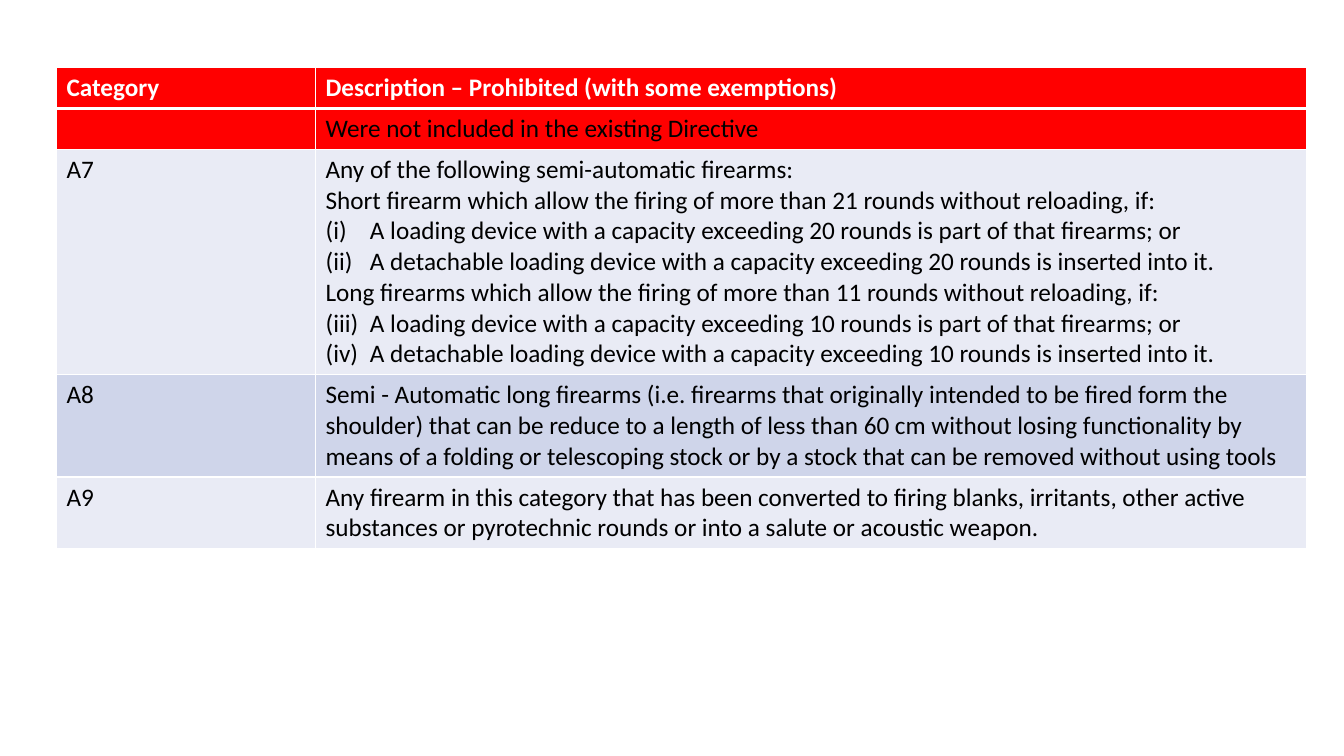
from dataclasses import dataclass
from pptx import Presentation
from pptx.dml.color import RGBColor as Color
from pptx.oxml.ns import qn
from pptx.util import Inches, Pt
from lxml.etree import SubElement as Sub


@dataclass(frozen=True)
class Theme:
    font: str = "Calibri"
    size: int = 18
    white: str = "FFFFFF"
    black: str = "000000"
    red: str = "FF0000"
    pale: str = "E9EBF5"
    blue: str = "CFD5EA"
    thin: int = 1
    thick: int = 3


@dataclass(frozen=True)
class Item:
    text: str
    num: int


class Deck:
    def __init__(self, theme):
        self.theme = theme
        self.prs = Presentation()
        self.prs.slide_width = Inches(13.33)
        self.prs.slide_height = Inches(7.5)
        self.slide = self.prs.slides.add_slide(self.prs.slide_layouts[6])

    def col(self, share):
        return int(self.prs.slide_width * share / 100)

    def row(self, share):
        return int(self.prs.slide_height * share / 100)

    def edge(self, cell, side, width):
        line = Sub(cell._tc.get_or_add_tcPr(), qn(f"a:ln{side}"), w=str(Pt(width)))
        fill = Sub(line, qn("a:solidFill"))
        Sub(fill, qn("a:srgbClr"), val=self.theme.white)

    def number(self, para, start):
        props = para._p.get_or_add_pPr()
        props.set("marL", str(Inches(0.44)))
        props.set("indent", str(-Inches(0.44)))
        Sub(props, qn("a:buFont"), typeface="+mj-lt")
        Sub(props, qn("a:buAutoNum"), type="romanLcParenBoth", startAt=str(start))

    def label(self, cell, lines, head):
        frame = cell.text_frame
        frame.text = "\n".join(x.text if isinstance(x, Item) else x for x in lines)
        for para, line in zip(frame.paragraphs, lines):
            if isinstance(line, Item):
                self.number(para, line.num)
            for run in para.runs:
                font = run.font
                font.name, font.size, font.bold = self.theme.font, Pt(self.theme.size), head
                tone = self.theme.white if head else self.theme.black
                font.color.rgb = Color.from_string(tone)

    def table(self, left, top, cols, rows, data, fills):
        shape = self.slide.shapes.add_table(
            len(rows), len(cols), self.col(left), self.row(top),
            self.col(sum(cols)), self.row(sum(rows)))
        grid = shape.table
        grid.first_row = grid.horz_banding = False
        for part, share in zip(grid.columns, cols):
            part.width = self.col(share)
        for part, share in zip(grid.rows, rows):
            part.height = self.row(share)
        for i, (texts, fill) in enumerate(zip(data, fills)):
            for j, lines in enumerate(texts):
                cell = grid.cell(i, j)
                for side in "LRTB":
                    bold = (i, side) in ((0, "B"), (1, "T"))
                    self.edge(cell, side, self.theme.thick if bold else self.theme.thin)
                cell.fill.solid()
                cell.fill.fore_color.rgb = Color.from_string(fill)
                self.label(cell, lines, i == 0)


def main():
    theme = Theme()
    deck = Deck(theme)

    def rules(limit):
        return [
            f"A loading device with a capacity exceeding {limit} rounds is part of that firearms; or",
            f"A detachable loading device with a capacity exceeding {limit} rounds is inserted into it.",
        ]

    semi = ["Any of the following semi-automatic firearms:"]
    for kind, limit, start in (("Short firearm", 20, 1), ("Long firearms", 10, 3)):
        semi.append(f"{kind} which allow the firing of more than {limit + 1} rounds without reloading, if:")
        semi += [Item(text, start) for text in rules(limit)]

    data = [
        (["Category"], ["Description – Prohibited (with some exemptions)"]),
        ([""], ["Were not included in the existing Directive"]),
        (["A7"], semi),
        (["A8"], ["Semi - Automatic long firearms (i.e. firearms that originally intended to be "
                  "fired form the shoulder) that can be reduce to a length of less than 60 cm "
                  "without losing functionality by means of a folding or telescoping stock or "
                  "by a stock that can be removed without using tools"]),
        (["A9"], ["Any firearm in this category that has been converted to firing blanks, "
                  "irritants, other active substances or pyrotechnic rounds or into a salute "
                  "or acoustic weapon."]),
    ]
    fills = [theme.red, theme.red, theme.pale, theme.blue, theme.pale]
    deck.table(4.2, 8.93, [19.28, 73.74], [5.4, 5.4, 29.4, 13.3, 9.3], data, fills)
    deck.prs.save("out.pptx")


if __name__ == "__main__":
    main()
